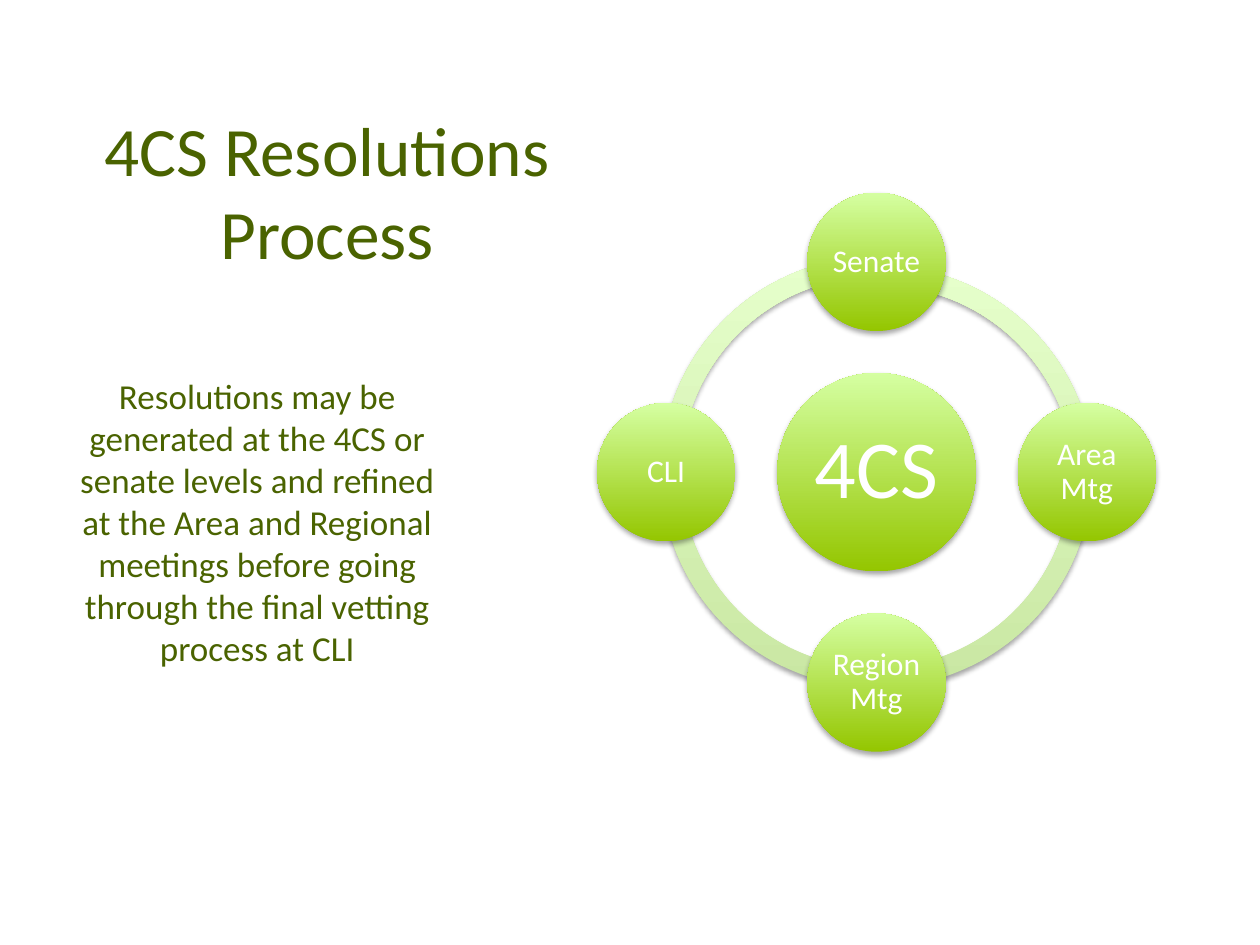
import lxml.etree
import pptx
import pptx.dml.color
import pptx.enum.shapes
import pptx.enum.text
import pptx.oxml.ns
import pptx.util

Cm = pptx.util.Cm
Pt = pptx.util.Pt
SHAPE = pptx.enum.shapes.MSO_SHAPE
ANCHOR = pptx.enum.text.MSO_ANCHOR

FONT = "Calibri"
DARK_GREEN = "4A6300"
WHITE = "FFFFFF"
CIRCLE_COLORS = ("94C600", "D5FFA2")
RING_COLORS = ("C9E7A3", "E6FFCB")

CENTER_X, CENTER_Y = 17.67, 9.52
RING_SIZE, HUB_SIZE, NODE_SIZE = 8.69, 4, 2.79
ORBIT = 4.24
RING_THICKNESS = 0.046

# Label and direction from the hub
NODES = [
    ("Senate", 0, -1),
    ("Area Mtg", 1, 0),
    ("Region Mtg", 0, 1),
    ("CLI", -1, 0),
]
# Start and end angle in degrees, shift right and down in cm
QUARTERS = [
    (180, 270, 0, 0),
    (90, 180, 0, 0),
    (0, 90, 0, 0),
    (270, 0, 0.05, 0.18),
]


def rgb(color):
    return pptx.dml.color.RGBColor.from_string(color)


def set_text(sp, text, size=18, color=WHITE, anchor=ANCHOR.MIDDLE, inset=None,
             line_spacing=None, before=0, after=0):
    tf = sp.text_frame
    tf.word_wrap = True
    tf.auto_size = pptx.enum.text.MSO_AUTO_SIZE.NONE
    tf.vertical_anchor = anchor
    if inset is not None:
        tf.margin_left = tf.margin_right = Cm(inset)
        tf.margin_top = tf.margin_bottom = Cm(inset)
    p = tf.paragraphs[0]
    p.alignment = pptx.enum.text.PP_ALIGN.CENTER
    p.line_spacing = line_spacing
    p.space_before, p.space_after = Pt(before), Pt(after)
    r = p.add_run()
    r.text = text
    r.font.name = FONT
    r.font.size = Pt(size)
    r.font.color.rgb = rgb(color)


def fill_placeholder(sp, left, top, width, height, text, **fmt):
    sp.left, sp.top, sp.width, sp.height = map(Cm, (left, top, width, height))
    set_text(sp, text, color=DARK_GREEN, **fmt)


def add_soft_shadow(sp):
    sp.shadow.inherit = False
    qn = pptx.oxml.ns.qn
    effects = sp.element.spPr.find(qn("a:effectLst"))
    shadow = lxml.etree.SubElement(
        effects, qn("a:outerShdw"), blurRad=str(Pt(3.1)), dist=str(Pt(1.8)),
        dir="5400000", rotWithShape="0")
    black = lxml.etree.SubElement(shadow, qn("a:srgbClr"), val="000000")
    lxml.etree.SubElement(black, qn("a:alpha"), val="35000")


def add_gradient_shape(s, kind, x, y, size, colors):
    """Add a square-framed shape centred on x, y; colors run from bottom to top."""
    sp = s.shapes.add_shape(kind, Cm(x - size / 2), Cm(y - size / 2),
                            Cm(size), Cm(size))
    sp.fill.gradient()
    sp.fill.gradient_angle = 90
    for stop, position, color in zip(sp.fill.gradient_stops, (0, 1), colors):
        stop.position = position
        stop.color.rgb = rgb(color)
    sp.line.fill.background()
    add_soft_shadow(sp)
    return sp


def add_ring_quarter(s, start, end, dx, dy):
    sp = add_gradient_shape(s, SHAPE.BLOCK_ARC, CENTER_X + dx, CENTER_Y + dy,
                            RING_SIZE, RING_COLORS)
    # Angles are stored in 60000ths of a degree, adjustments in 100000ths
    sp.adjustments[0] = start * 0.6
    sp.adjustments[1] = end * 0.6
    sp.adjustments[2] = RING_THICKNESS


def add_circle(s, x, y, diameter, text, **fmt):
    sp = add_gradient_shape(s, SHAPE.OVAL, x, y, diameter, CIRCLE_COLORS)
    set_text(sp, text, line_spacing=0.9, **fmt)


def main():
    prs = pptx.Presentation()
    prs.slide_width, prs.slide_height = Cm(25.4), Cm(19.05)
    s = prs.slides.add_slide(prs.slide_layouts[0])

    fill_placeholder(s.shapes.title, 1.83, 1.35, 9.53, 4.98,
                     "4CS Resolutions Process", size=39.6)
    fill_placeholder(
        s.placeholders[1], 1.3, 7.42, 7.77, 10.19,
        "Resolutions may be generated at the 4CS or senate levels and refined "
        "at the Area and Regional meetings before going through the final "
        "vetting process at CLI",
        size=20, anchor=ANCHOR.TOP, before=4)

    for quarter in QUARTERS:
        add_ring_quarter(s, *quarter)
    add_circle(s, CENTER_X, CENTER_Y, HUB_SIZE, "4CS", size=47, inset=0.17)
    for label, dx, dy in NODES:
        add_circle(s, CENTER_X + dx * ORBIT, CENTER_Y + dy * ORBIT, NODE_SIZE,
                   label, inset=0.06)

    prs.save("out.pptx")


if __name__ == "__main__":
    main()
